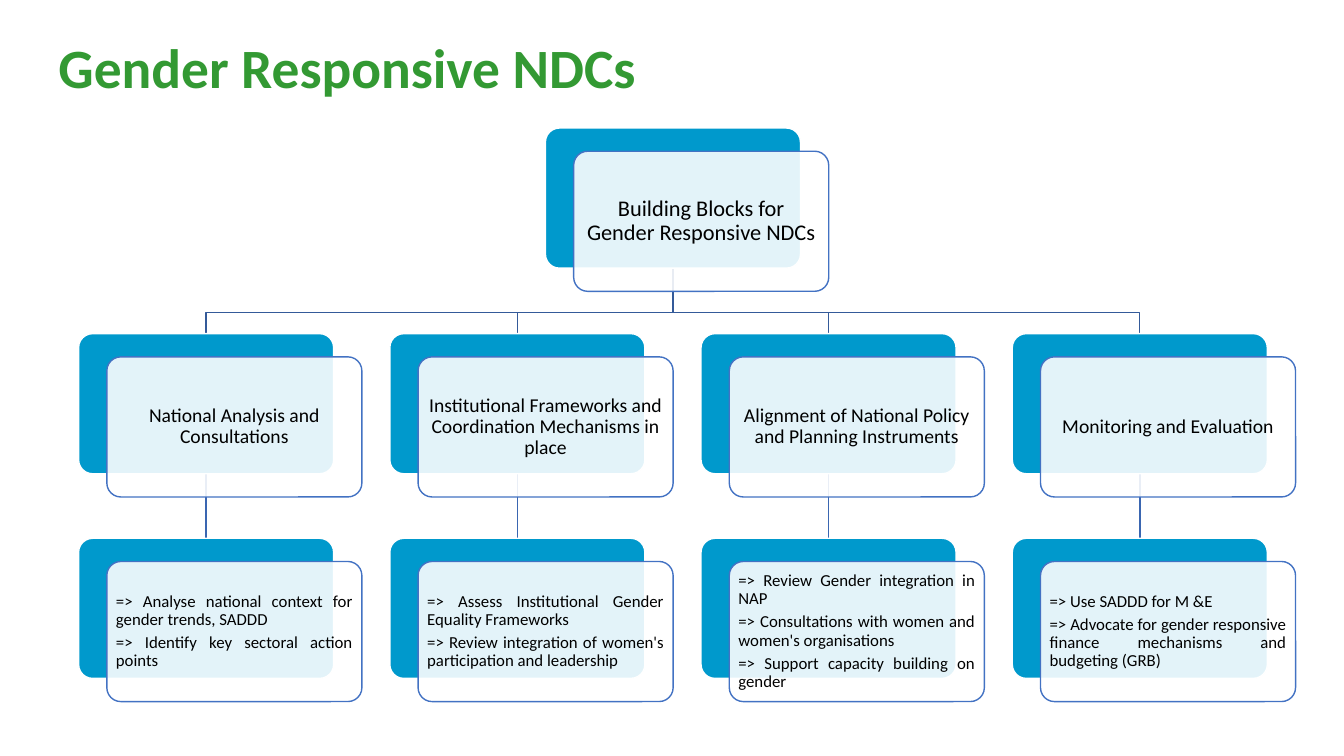
from dataclasses import dataclass

from lxml import etree
from pptx import Presentation
from pptx import util as u
from pptx.dml import color
from pptx.enum import shapes, text
from pptx.oxml import ns


@dataclass(frozen=True)
class Theme:
    font: str = "Calibri"
    title: str = "339933"
    ink: str = "000000"
    white: str = "FFFFFF"
    block: str = "0099CC"
    outline: str = "4372C3"
    trunk: str = "345A99"
    stem: str = "3A66B1"
    title_size: float = 39.6
    root_size: float = 16
    pillar_size: float = 14
    action_size: float = 12


theme = Theme()
rgb = color.RGBColor.from_string

pillars = [
    ("National Analysis and Consultations",
     ["=> Analyse national context for gender trends, SADDD",
      "=> Identify key sectoral action points"]),
    ("Institutional Frameworks and Coordination Mechanisms in place",
     ["=> Assess Institutional Gender Equality Frameworks",
      "=> Review integration of women's participation and leadership"]),
    ("Alignment of National Policy and Planning Instruments",
     ["=> Review Gender integration in NAP",
      "=> Consultations with women and women's organisations",
      "=> Support capacity building on gender"]),
    ("Monitoring and Evaluation",
     ["=> Use SADDD for M &E",
      "=> Advocate for gender responsive finance mechanisms and budgeting (GRB)"]),
]

# Diagram grid
LEFT, LAST_LEFT = 0.78, 10.04
COLUMN_STEP = (LAST_LEFT - LEFT) / (len(pillars) - 1)
ROOT_TOP, PILLAR_TOP, ACTION_TOP = 1.27, 3.31, 5.34
CARD_W, CARD_H = 2.53, 1.39
SHIFT_X, SHIFT_Y = 0.28, 0.23
BRANCH_Y = 3.1


def write(box, lines, size, ink, align, inset, bold=False):
    frame = box.text_frame
    frame.word_wrap = True
    frame.auto_size = text.MSO_AUTO_SIZE.NONE
    frame.vertical_anchor = text.MSO_ANCHOR.MIDDLE
    frame.margin_left = frame.margin_right = u.Inches(inset)
    frame.margin_top = frame.margin_bottom = u.Inches(0.05)
    for index, line in enumerate(lines):
        para = frame.add_paragraph() if index else frame.paragraphs[0]
        para.alignment = align
        para.line_spacing = 0.9
        if index:
            para.space_before = u.Pt(3.5)
        span = para.add_run()
        span.text = line
        span.font.name = theme.font
        span.font.size = u.Pt(size)
        span.font.bold = bold
        span.font.color.rgb = rgb(ink)


def add_card(page, left, top, lines, size, align, inset=0.06):
    layers = [(left, top, theme.block, theme.white),
              (left + SHIFT_X, top + SHIFT_Y, theme.white, theme.outline)]
    for x, y, fill, line in layers:
        box = page.shapes.add_shape(
            shapes.MSO_SHAPE.ROUNDED_RECTANGLE,
            u.Inches(x), u.Inches(y), u.Inches(CARD_W), u.Inches(CARD_H))
        box.adjustments[0] = 0.1
        box.shadow.inherit = False
        box.fill.solid()
        box.fill.fore_color.rgb = rgb(fill)
        box.line.color.rgb = rgb(line)
        box.line.width = u.Pt(1)
    # The front layer is slightly see-through and carries the text
    tint = box.fill._xPr.find(".//" + ns.qn("a:srgbClr"))
    etree.SubElement(tint, ns.qn("a:alpha"), val="89000")
    write(box, lines, size, theme.ink, align, inset)


deck = Presentation()
deck.slide_width, deck.slide_height = u.Inches(13.33), u.Inches(7.5)
page = deck.slides.add_slide(deck.slide_layouts[5])

# Title
title = page.shapes.title
title.left, title.top = u.Inches(0.48), u.Inches(0.32)
title.width, title.height = u.Inches(10.78), u.Inches(0.75)
write(title, ["Gender Responsive NDCs"], theme.title_size, theme.title,
      text.PP_ALIGN.LEFT, 0.1, bold=True)

# Connecting lines, behind the cards
root_left = (LEFT + LAST_LEFT) / 2
root_x = root_left + CARD_W / 2
for column in range(len(pillars)):
    x = LEFT + column * COLUMN_STEP + CARD_W / 2
    routes = [
        (theme.stem, [(x, PILLAR_TOP + CARD_H), (x, ACTION_TOP)]),
        (theme.trunk, [(root_x, ROOT_TOP + CARD_H), (root_x, BRANCH_Y),
                       (x, BRANCH_Y), (x, PILLAR_TOP)]),
    ]
    for ink, route in routes:
        start, *corners = [(u.Inches(px), u.Inches(py)) for px, py in route]
        builder = page.shapes.build_freeform(*start)
        builder.add_line_segments(corners, close=False)
        link = builder.convert_to_shape()
        link.fill.background()
        link.shadow.inherit = False
        link.line.color.rgb = rgb(ink)
        link.line.width = u.Pt(1)

# Root card
add_card(page, root_left, ROOT_TOP, ["Building Blocks for Gender Responsive NDCs"],
         theme.root_size, text.PP_ALIGN.CENTER)

# Pillars with their actions
for column, (pillar, actions) in enumerate(pillars):
    left = LEFT + column * COLUMN_STEP
    add_card(page, left, PILLAR_TOP, [pillar], theme.pillar_size,
             text.PP_ALIGN.CENTER)
    add_card(page, left, ACTION_TOP, actions, theme.action_size,
             text.PP_ALIGN.JUSTIFY, inset=0.05)

deck.save("out.pptx")
